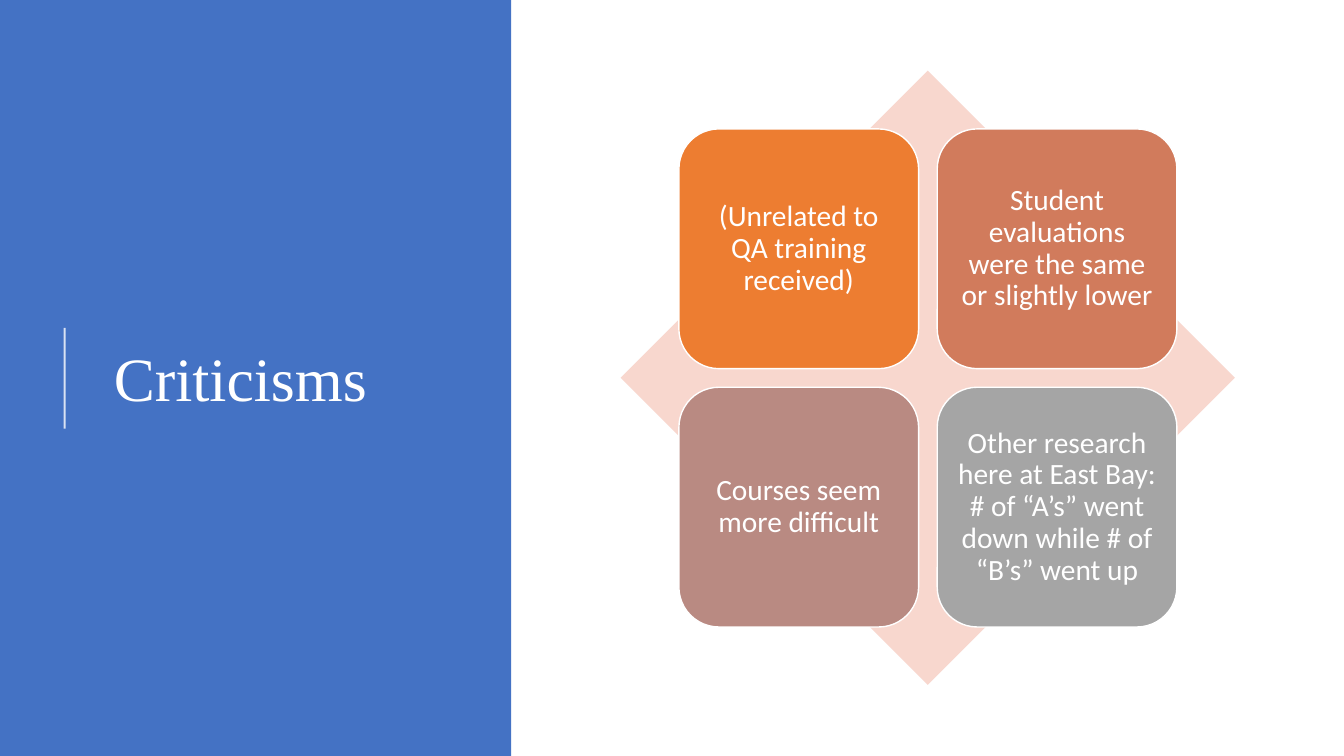
from lxml.etree import SubElement
from pptx import Presentation
from pptx.dml.color import RGBColor
from pptx.enum.shapes import MSO_CONNECTOR, MSO_SHAPE
from pptx.enum.text import MSO_ANCHOR, PP_ALIGN
from pptx.oxml.ns import qn
from pptx.util import Cm, Pt


def paint(form, color):
    form.solid()
    form.fore_color.rgb = RGBColor.from_string(color)


def write(shape, text, font, size, align):
    frame = shape.text_frame
    frame.word_wrap = True
    frame.vertical_anchor = MSO_ANCHOR.MIDDLE
    frame.text = text
    para = frame.paragraphs[0]
    para.alignment = align
    para.line_spacing = 0.9
    run = para.runs[0]
    run.font.name = font
    run.font.size = Pt(size)
    paint(run.font.fill, "FFFFFF")


deck = Presentation()
deck.slide_width = Cm(33.87)
deck.slide_height = Cm(19.05)
slide = deck.slides.add_slide(deck.slide_layouts[6])
shapes = slide.shapes

panel = shapes.add_shape(MSO_SHAPE.RECTANGLE, 0, 0, Cm(12.88), deck.slide_height)
panel.shadow.inherit = False
paint(panel.fill, "4472C4")
panel.line.fill.background()

title = shapes.add_textbox(Cm(2.62), Cm(1.98), Cm(9.37), Cm(15.29))
write(title, "Criticisms", "Times New Roman", 44, PP_ALIGN.LEFT)

rule = shapes.add_connector(MSO_CONNECTOR.STRAIGHT, Cm(1.63), Cm(10.8), Cm(1.63), Cm(8.26))
paint(rule.line.fill, "FFFFFF")
rule.line.width = Pt(1.5)
tint = rule.line._ln.find(".//" + qn("a:srgbClr"))
SubElement(tint, qn("a:alpha"), val="80000")
SubElement(rule._element.spPr, qn("a:effectLst"))

diamond = shapes.add_shape(MSO_SHAPE.DIAMOND, Cm(15.64), Cm(1.78), Cm(15.48), Cm(15.48))
diamond.shadow.inherit = False
paint(diamond.fill, "F8D7CE")
diamond.line.fill.background()

cards = [
    ("(Unrelated to QA training received)", "ED7D31"),
    ("Student evaluations were the same or slightly lower", "D17B5C"),
    ("Courses seem more difficult", "B98A82"),
    ("Other research here at East Bay: # of “A’s” went down while # of “B’s” went up", "A5A5A5"),
]
side, step = 6.04, 6.51
for i, (text, color) in enumerate(cards):
    row, col = divmod(i, 2)
    card = shapes.add_shape(MSO_SHAPE.ROUNDED_RECTANGLE, Cm(17.11 + col * step),
                            Cm(3.25 + row * step), Cm(side), Cm(side))
    card.shadow.inherit = False
    paint(card.fill, color)
    paint(card.line.fill, "FFFFFF")
    card.line.width = Pt(1)
    frame = card.text_frame
    frame.margin_left = frame.margin_right = Cm(0.22)
    frame.margin_top = frame.margin_bottom = Cm(0.22)
    write(card, text, "Calibri", 21, PP_ALIGN.CENTER)

deck.save("out.pptx")
